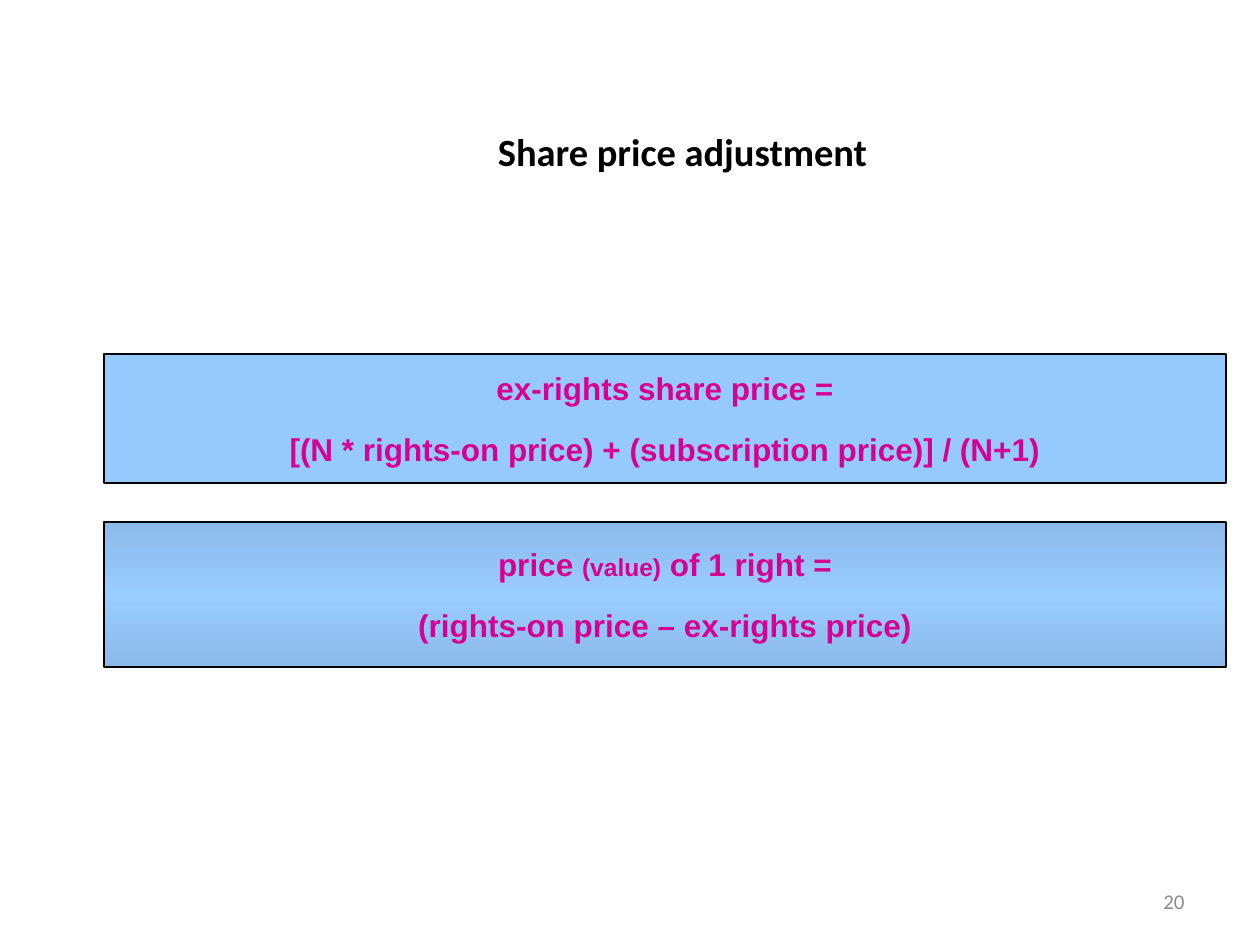
from copy import deepcopy
from dataclasses import dataclass

from pptx import Presentation
from pptx.dml.color import RGBColor as Color
from pptx.enum.shapes import MSO_SHAPE as Preset
from pptx.enum.text import MSO_ANCHOR as Anchor, PP_ALIGN as Align
from pptx.util import Emu, Pt

PX = 914400 / 126


@dataclass(frozen=True)
class Theme:
    heading_font: str = "Calibri"
    formula_font: str = "Arial"
    black: str = "000000"
    gray: str = "8C8C8C"
    magenta: str = "D60093"
    sky: str = "99CCFF"
    soft_edge: str = "97CAFC"
    deep_edge: str = "8CBAE9"
    title_size: int = 22
    formula_size: int = 18
    note_size: int = 14
    number_size: int = 12
    line_gap: int = 13
    outline: float = 0.75


THEME = Theme()
TITLE = {"name": THEME.heading_font, "size": Pt(THEME.title_size), "bold": True}
NUMBER = {"name": THEME.heading_font, "size": Pt(THEME.number_size)}
FORMULA = {"name": THEME.formula_font, "size": Pt(THEME.formula_size), "bold": True}
NOTE = {**FORMULA, "size": Pt(THEME.note_size)}


def to_emu(box):
    return [Emu(round(length * PX)) for length in box]


def set_values(target, values):
    for name, value in values.items():
        setattr(target, name, value)


def add_runs(paragraph, runs, color, alignment):
    paragraph.alignment = alignment
    for text, font_format in runs:
        run = paragraph.add_run()
        run.text = text
        set_values(run.font, font_format)
        run.font.color.rgb = Color.from_string(color)


def add_label(slide, box, text, font_format, color, alignment):
    shape = slide.shapes.add_textbox(*to_emu(box))
    frame = shape.text_frame
    set_values(frame, {"word_wrap": True, "vertical_anchor": Anchor.MIDDLE})
    add_runs(frame.paragraphs[0], [(text, font_format)], color, alignment)


def fill_mirrored_gradient(fill, edge, center):
    fill.gradient()
    fill.gradient_angle = 90
    first = fill.gradient_stops[0]._gs
    first.addnext(deepcopy(first))
    for stop, position, color in zip(fill.gradient_stops, (0, 0.5, 1), (edge, center, edge)):
        stop.position = position
        stop.color.rgb = Color.from_string(color)


def add_formula(slide, box, edge, lines):
    shape = slide.shapes.add_shape(Preset.RECTANGLE, *to_emu(box))
    shape.shadow.inherit = False
    fill_mirrored_gradient(shape.fill, edge, THEME.sky)
    shape.line.color.rgb = Color.from_string(THEME.black)
    shape.line.width = Pt(THEME.outline)
    frame = shape.text_frame
    set_values(frame, {"word_wrap": True, "vertical_anchor": Anchor.MIDDLE})
    for index, runs in enumerate(lines):
        paragraph = frame.add_paragraph() if index else frame.paragraphs[0]
        paragraph.space_before = Pt(THEME.line_gap if index else 0)
        add_runs(paragraph, runs, THEME.magenta, Align.CENTER)


def add_formulas(slide, box):
    left, top, width, height = box
    price_height, right_height = 129, 145
    add_formula(slide, (left, top, width, price_height), THEME.soft_edge, [
        [("ex-rights share price =", FORMULA)],
        [("[(N * rights-on price) + (subscription price)] / (N+1)", FORMULA)],
    ])
    right_top = top + height - right_height
    add_formula(slide, (left, right_top, width, right_height), THEME.deep_edge, [
        [("price ", FORMULA), ("(value)", NOTE), (" of 1 right =", FORMULA)],
        [("(rights-on price – ex-rights price)", FORMULA)],
    ])


def main():
    presentation = Presentation()
    width, height = to_emu((1260, 945))
    set_values(presentation, {"slide_width": width, "slide_height": height})
    slide = presentation.slides.add_slide(presentation.slide_layouts[6])
    add_label(slide, (120, 118, 1125, 66), "Share price adjustment", TITLE, THEME.black, Align.CENTER)
    add_label(slide, (903, 876, 294, 50), "20", NUMBER, THEME.gray, Align.RIGHT)
    add_formulas(slide, (104, 354, 1122, 313))
    presentation.save("out.pptx")


if __name__ == "__main__":
    main()
